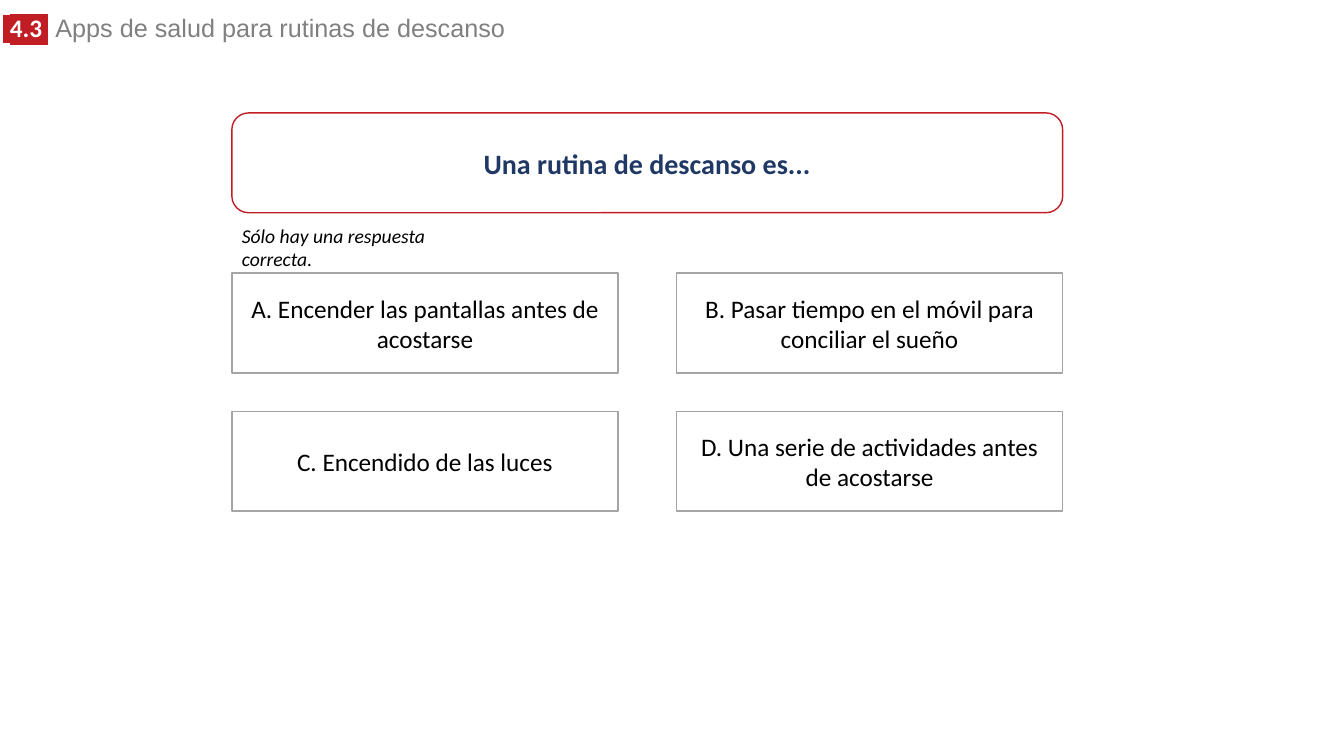
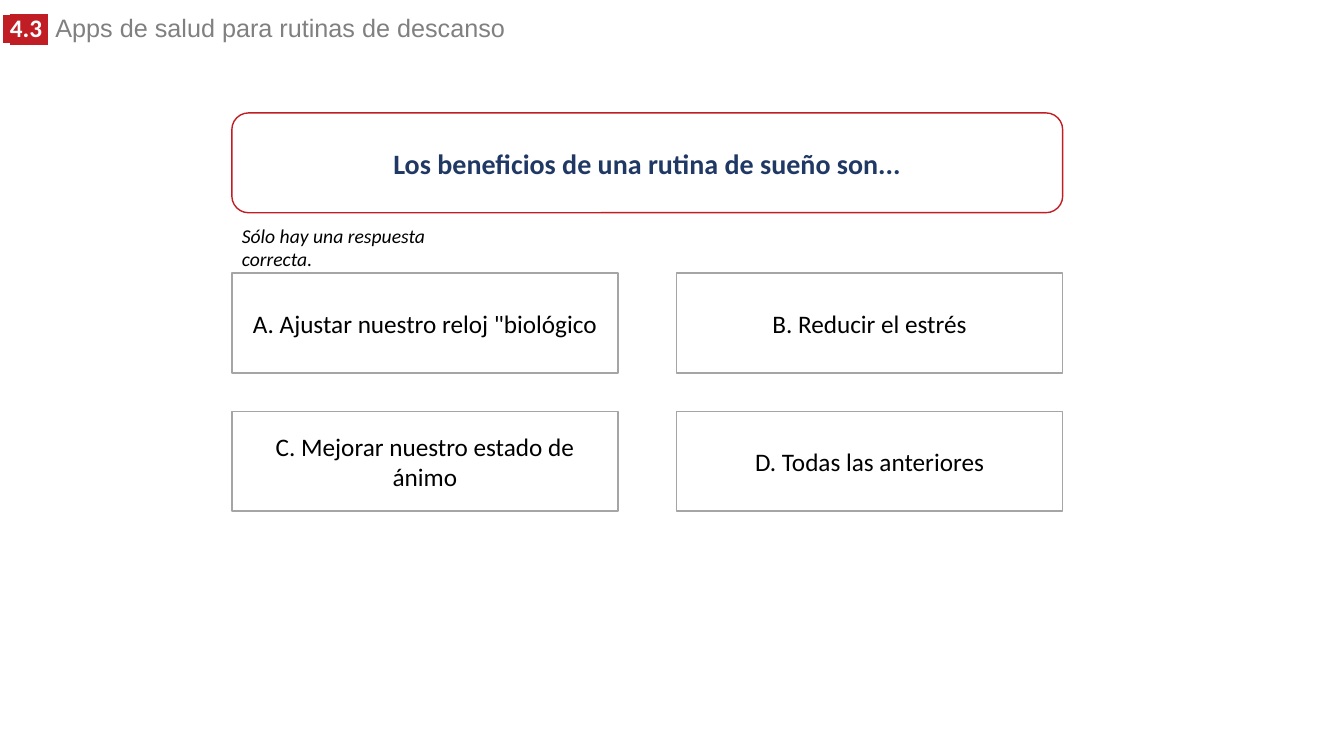
from lxml import etree
from pptx import Presentation
from pptx.dml.color import RGBColor
from pptx.enum.shapes import MSO_SHAPE as SHAPE
from pptx.enum.text import MSO_ANCHOR as ANCHOR, PP_ALIGN as ALIGN
from pptx.oxml.ns import qn
from pptx.util import Inches, Pt

RED, NAVY, GREY, SILVER = "C01E24", "203864", "808080", "A5A5A5"
BLACK, WHITE = "000000", "FFFFFF"

LEFT, QUESTION_TOP, HINT_TOP, ANSWERS_TOP = 2.3, 1.12, 2.17, 2.71
BOX_W, BOX_H = 3.83, 0.99
COL_STEP, ROW_STEP = 4.41, 1.37
COLS = 2

SECTION = "4.3"
TITLE = "Apps de salud para rutinas de descanso"
HINT = "Sólo hay una respuesta correcta."
QUESTIONS = [
    ("Una rutina de descanso es...",
     ["A. Encender las pantallas antes de acostarse",
      "B. Pasar tiempo en el móvil para conciliar el sueño",
      "C. Encendido de las luces",
      "D. Una serie de actividades antes de acostarse"]),
    ("Los beneficios de una rutina de sueño son...",
     ['A. Ajustar nuestro reloj "biológico',
      "B. Reducir el estrés",
      "C. Mejorar nuestro estado de ánimo",
      "D. Todas las anteriores"]),
]


def rgb(color):
    return RGBColor.from_string(color)


def style(font, size, color, name="Calibri", bold=False, italic=False):
    font.size, font.name = Pt(size), name
    font.bold, font.italic = bold, italic
    font.color.rgb = rgb(color)


def highlight(r, color):
    """Put a marker colour behind a run; it must precede the font name."""
    mark = etree.Element(qn("a:highlight"))
    etree.SubElement(mark, qn("a:srgbClr"), val=color)
    r.font._element.find(qn("a:solidFill")).addnext(mark)


def add_text(s, x, y, w, h):
    """Add a wrapping text box and return its first paragraph."""
    tf = s.shapes.add_textbox(*map(Inches, (x, y, w, h))).text_frame
    tf.word_wrap = True
    return tf.paragraphs[0]


def add_header(s):
    p = add_text(s, -0.07, 0.07, 9.52, 0.43)
    p.line_spacing = 0.8
    for text, size, color, name, marker in [
            (" ", 18, WHITE, "Arial", RED),
            (SECTION + " ", 18, WHITE, "Calibri", RED),
            (" ", 24, BLACK, "Calibri", None),
            (TITLE, 18, GREY, "Arial", None)]:
        r = p.add_run()
        r.text = text
        style(r.font, size, color, name, bold=marker is not None)
        if marker:
            highlight(r, marker)


def add_box(s, kind, x, y, w, line, text, size, color, bold=False):
    sp = s.shapes.add_shape(kind, *map(Inches, (x, y, w, BOX_H)))
    sp.shadow.inherit = False
    sp.fill.solid()
    sp.fill.fore_color.rgb = rgb(WHITE)
    sp.line.color.rgb = rgb(line)
    sp.line.width = Pt(1)
    tf = sp.text_frame
    tf.word_wrap = True
    tf.vertical_anchor = ANCHOR.MIDDLE
    p = tf.paragraphs[0]
    p.text = text
    p.alignment = ALIGN.CENTER
    style(p.font, size, color, bold=bold)


def add_hint(s):
    p = add_text(s, LEFT, HINT_TOP, 2.36, 0.34)
    p.text = HINT
    style(p.font, 14, BLACK, italic=True)


def add_question(prs, question, answers):
    s = prs.slides.add_slide(prs.slide_layouts[6])
    add_header(s)
    add_box(s, SHAPE.ROUNDED_RECTANGLE, LEFT, QUESTION_TOP, COL_STEP + BOX_W,
            RED, question, 20, NAVY, bold=True)
    for i, answer in enumerate(answers):
        row, col = divmod(i, COLS)
        add_box(s, SHAPE.RECTANGLE, LEFT + col * COL_STEP,
                ANSWERS_TOP + row * ROW_STEP, BOX_W, SILVER, answer, 18, BLACK)
    add_hint(s)


def main():
    prs = Presentation()
    prs.slide_width, prs.slide_height = Inches(13.33), Inches(7.5)
    for question, answers in QUESTIONS:
        add_question(prs, question, answers)
    prs.save("out.pptx")


if __name__ == "__main__":
    main()
